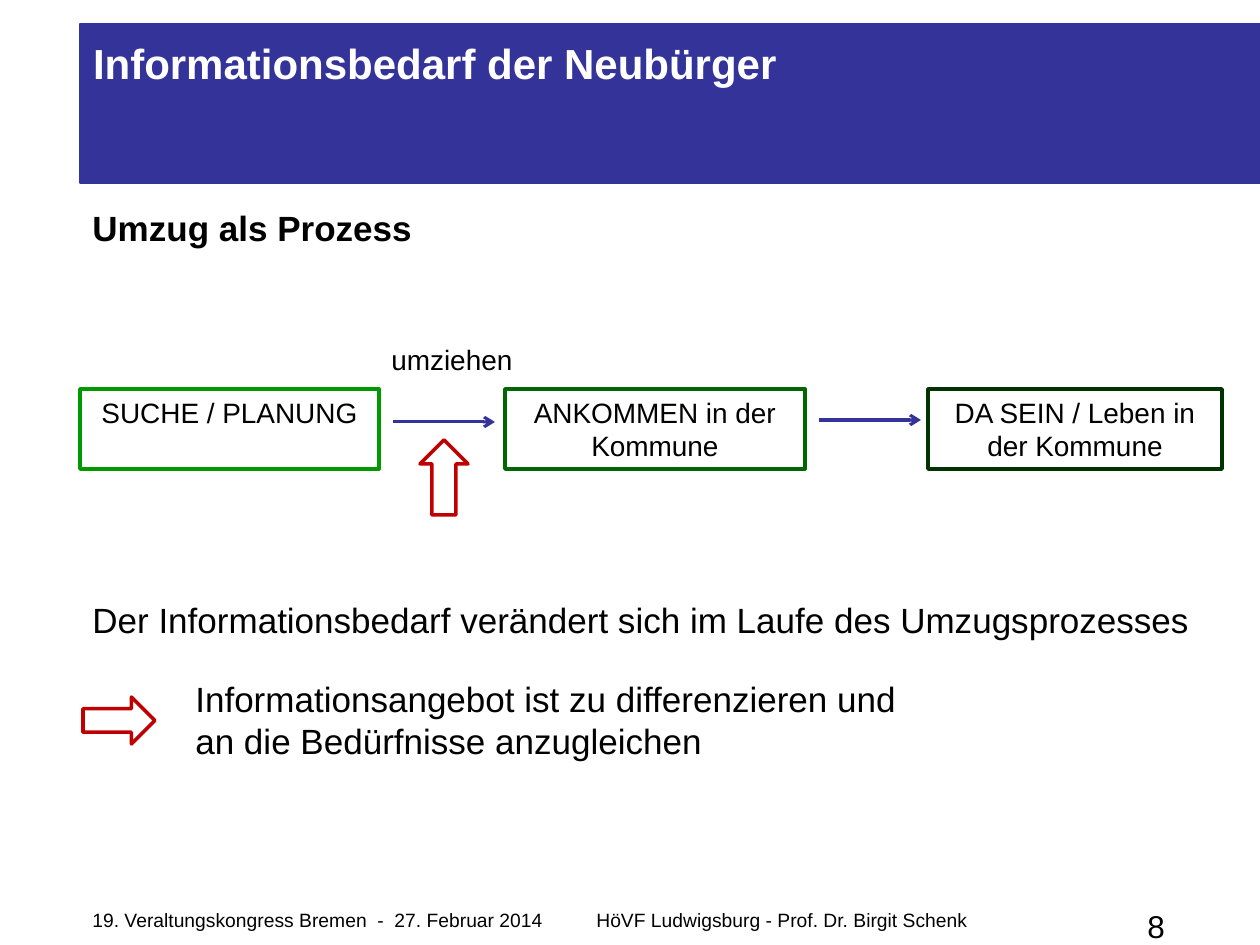
from dataclasses import dataclass

from lxml import etree
from pptx import Presentation
from pptx.dml.color import RGBColor
from pptx.enum.shapes import MSO_CONNECTOR, MSO_SHAPE
from pptx.enum.text import MSO_ANCHOR, PP_ALIGN
from pptx.oxml.ns import qn
from pptx.util import Emu, Pt

RECT = MSO_SHAPE.RECTANGLE
UP = MSO_SHAPE.UP_ARROW
RIGHT = MSO_SHAPE.RIGHT_ARROW
STRAIGHT = MSO_CONNECTOR.STRAIGHT
LEFT, CENTER = PP_ALIGN.LEFT, PP_ALIGN.CENTER
TOP = MSO_ANCHOR.TOP
TITLE_ONLY = 5


@dataclass(frozen=True)
class Theme:
    font: str = "Arial"
    blue: str = "333399"
    red: str = "C00000"
    black: str = "000000"
    white: str = "FFFFFF"
    steps: tuple = ("009900", "006600", "003300")
    head: int = 24
    body: int = 20
    page: int = 18
    label: int = 16
    foot: int = 11


def px(n):
    return Emu(round(n * 914400 / 126))


def rgb(code):
    return RGBColor.from_string(code)


class Deck:
    def __init__(self, theme):
        self.theme = theme
        self.prs = Presentation()
        self.prs.slide_width, self.prs.slide_height = px(1260), px(945)
        layout = self.prs.slide_layouts[TITLE_ONLY]
        self.slide = self.prs.slides.add_slide(layout)
        self.shapes = self.slide.shapes

    def label(self, shape, text, size, color=None, bold=False, align=LEFT):
        frame = shape.text_frame
        frame.word_wrap = True
        frame.vertical_anchor = TOP
        frame.text = text
        para = frame.paragraphs[0]
        para.alignment = align
        for run in para.runs:
            font = run.font
            font.name, font.size, font.bold = self.theme.font, Pt(size), bold
            font.color.rgb = rgb(color or self.theme.black)
        return para

    def title(self, text, *box):
        shape = self.shapes.title
        shape.left, shape.top, shape.width, shape.height = map(px, box)
        frame = shape.text_frame
        frame.margin_left = frame.margin_right = 0
        frame.margin_top = frame.margin_bottom = 0
        self.label(shape, text, self.theme.head, self.theme.white, True)

    def text(self, text, size, *box, bold=False):
        shape = self.shapes.add_textbox(*map(px, box))
        return self.label(shape, text, size, bold=bold)

    def shape(self, kind, color, *box, width=2, fill=False):
        shape = self.shapes.add_shape(kind, *map(px, box))
        shape.shadow.inherit = False
        shape.line.color.rgb = rgb(color)
        shape.line.width = Pt(width)
        if fill:
            shape.fill.solid()
            shape.fill.fore_color.rgb = rgb(color)
        else:
            shape.fill.background()
        return shape

    def band(self, *box):
        """Place a filled bar behind the title."""
        bar = self.shape(RECT, self.theme.blue, *box, width=0.75, fill=True)
        self.shapes.title.element.addprevious(bar.element)

    def step(self, text, color, *box):
        shape = self.shape(RECT, color, *box)
        self.label(shape, text, self.theme.label, align=CENTER)

    def arrow(self, x, y, length):
        line = self.shapes.add_connector(
            STRAIGHT, px(x), px(y), px(x + length), px(y))
        line.line.color.rgb = rgb(self.theme.blue)
        line.line.width = Pt(1.75)
        props = line.element.spPr
        etree.SubElement(props.find(qn("a:ln")), qn("a:tailEnd"), type="arrow")
        etree.SubElement(props, qn("a:effectLst"))

    def footer(self, text, tab, *box):
        para = self.text(text, self.theme.foot, *box)
        tabs = etree.Element(qn("a:tabLst"))
        etree.SubElement(tabs, qn("a:tab"), pos=str(px(tab)), algn="l")
        para._p.get_or_add_pPr().append(tabs)


def main():
    theme = Theme()
    deck = Deck(theme)
    left = 80

    deck.band(left, 24, 1180, 159)
    deck.title("Informationsbedarf der Neubürger", 93, 37, 1125, 146)
    deck.text("Umzug als Prozess", theme.body, left, 200, 549, 55, bold=True)

    steps = (
        ("SUCHE / PLANUNG", left, 299),
        ("ANKOMMEN in der Kommune", 505, 300),
        ("DA SEIN / Leben in der Kommune", 928, 294),
    )
    for (name, x, width), color in zip(steps, theme.steps):
        deck.step(name, color, x, 389, width, 80)
    for x, y in ((393, 422), (819, 420)):
        deck.arrow(x, y, 102)
    deck.text("umziehen", theme.label, 379, 336, 151, 47)
    deck.shape(UP, theme.red, 420, 440, 48, 75)

    deck.text("Der Informationsbedarf verändert sich im Laufe des "
              "Umzugsprozesses", theme.body, left, 592, 1142, 55)
    deck.shape(RIGHT, theme.red, 83, 697, 72, 47)
    deck.text("Informationsangebot ist zu differenzieren und an die "
              "Bedürfnisse anzugleichen", theme.body, 183, 671, 745, 97)

    deck.footer("19. Veraltungskongress Bremen  -  27. Februar 2014\t"
                "HöVF Ludwigsburg - Prof. Dr. Birgit Schenk",
                504, left, 902, 1144, 37)
    deck.text("8", theme.page, 1135, 901, 62, 25)
    deck.prs.save("out.pptx")


if __name__ == "__main__":
    main()
